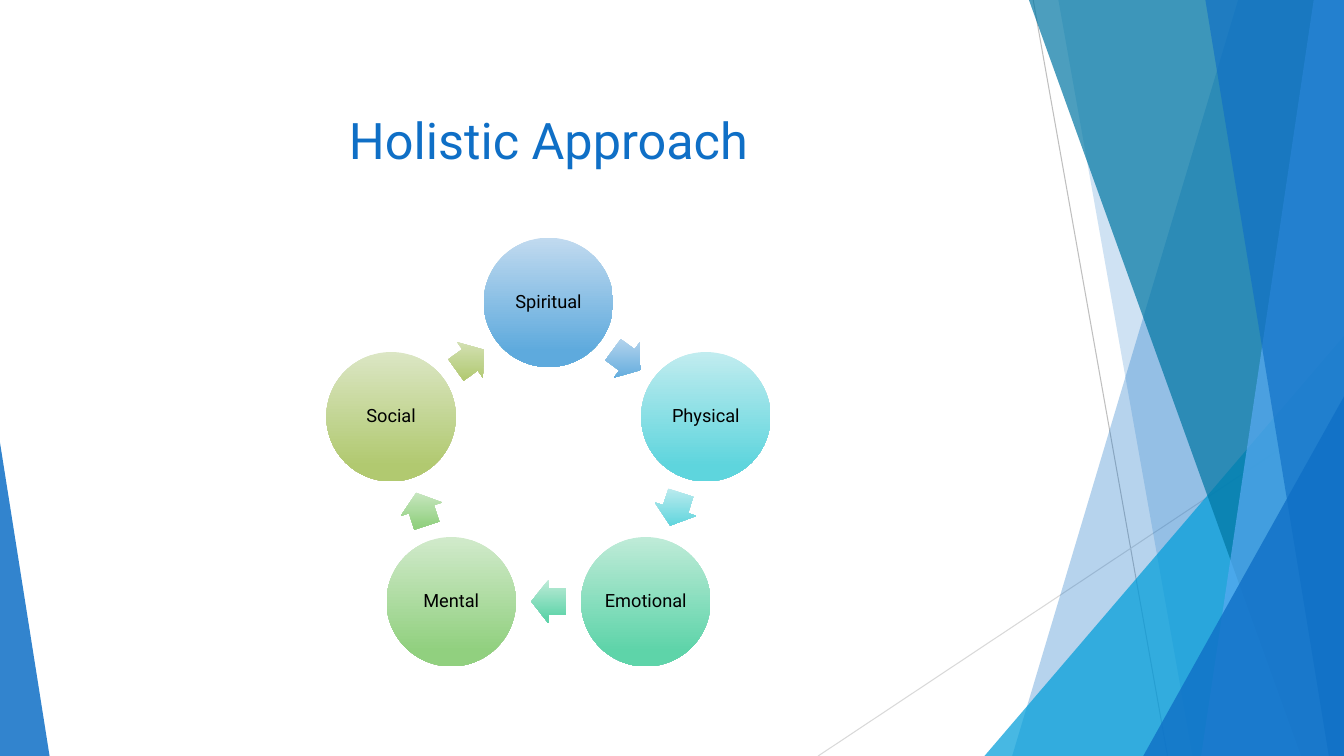
from math import cos, radians, sin

from pptx import Presentation
from pptx import util as u
from pptx.dml.color import RGBColor
from pptx.enum import shapes, text
from pptx.oxml import ns, xmlchemy

# Grid of square cells, 12 to the inch
COLUMNS, ROWS = 160, 90
CELL = u.Inches(1) / 12
FONT = "Roboto"

BLACK = RGBColor(0x00, 0x00, 0x00)
BLUE = RGBColor(0x0F, 0x6F, 0xC6)
SKY = RGBColor(0x00, 0x9D, 0xD9)
TEAL = RGBColor(0x00, 0x76, 0xA3)
LIGHT_BLUE = RGBColor(0x59, 0xAA, 0xF2)
GREY = RGBColor(0xBF, 0xBF, 0xBF)
PALE_GREY = RGBColor(0xD9, 0xD9, 0xD9)

# Cycle steps, clockwise from the top: label, upper colour, lower colour
STEPS = [
    ("Spiritual", RGBColor(0xC1, 0xDA, 0xEF), RGBColor(0x5E, 0xAA, 0xDD)),
    ("Physical", RGBColor(0xC1, 0xEC, 0xEF), RGBColor(0x5E, 0xD5, 0xDD)),
    ("Emotional", RGBColor(0xBF, 0xEB, 0xD8), RGBColor(0x5E, 0xD4, 0xA9)),
    ("Mental", RGBColor(0xD1, 0xEA, 0xCB), RGBColor(0x91, 0xD0, 0x7F)),
    ("Social", RGBColor(0xDB, 0xE6, 0xC4), RGBColor(0xB1, 0xC9, 0x70)),
]
CENTRE = (65.3, 55.7)
CIRCLE_RADIUS, ARROW_RADIUS = 19.7, 15.9
CIRCLE_SIZE, ARROW_SIZE = (15.4, 15.4), (4.1, 5.2)


def cells(*counts):
    return [u.Emu(round(count * CELL)) for count in counts]


def fill_solid(shape, colour, opacity):
    shape.shadow.inherit = False
    shape.line.fill.background()
    shape.fill.solid()
    shape.fill.fore_color.rgb = colour
    colour_node = shape.fill._xPr.find(".//" + ns.qn("a:srgbClr"))
    alpha = xmlchemy.OxmlElement("a:alpha")
    alpha.set("val", str(opacity * 1000))
    colour_node.append(alpha)


def fill_gradient(shape, upper, lower):
    shape.shadow.inherit = False
    shape.line.fill.background()
    shape.fill.gradient()
    shape.fill.gradient_angle = 270
    for stop, colour, position in zip(shape.fill.gradient_stops, (upper, lower), (0, 0.88)):
        stop.color.rgb = colour
        stop.position = position
    # Keep the gradient upright when the shape is rotated
    shape.fill._xPr.find(ns.qn("a:gradFill")).set("rotWithShape", "0")


def add_thin_line(page, start, end, colour):
    line = page.shapes.add_connector(
        shapes.MSO_CONNECTOR.STRAIGHT, *cells(*start), *cells(*end))
    line.line.color.rgb = colour
    line.line.width = u.Pt(0.75)
    line._element.spPr.append(xmlchemy.OxmlElement("a:effectLst"))


def add_band(page, top_column, bottom_column, colour, opacity):
    """Full-height band from a slanted left edge to the right slide edge."""
    builder = page.shapes.build_freeform(*cells(top_column, 0), scale=1.0)
    corners = [(COLUMNS, 0), (COLUMNS, ROWS), (bottom_column, ROWS)]
    builder.add_line_segments([cells(*corner) for corner in corners], close=True)
    fill_solid(builder.convert_to_shape(), colour, opacity)


def add_corner(page, left, right, top, apex, colour, opacity):
    """Triangle standing on the bottom edge of the slide."""
    corner = page.shapes.add_shape(
        shapes.MSO_SHAPE.ISOSCELES_TRIANGLE, *cells(left, top, right - left, ROWS - top))
    corner.adjustments[0] = apex
    fill_solid(corner, colour, opacity)


def write(box, words, size, colour):
    frame = box.text_frame
    frame.text = words
    frame.word_wrap = True
    frame.vertical_anchor = text.MSO_ANCHOR.MIDDLE
    para = frame.paragraphs[0]
    para.alignment = text.PP_ALIGN.CENTER
    font = para.runs[0].font
    font.name, font.size, font.color.rgb = FONT, u.Pt(size), colour


def add_on_ring(page, kind, angle, radius, size):
    """Shape centred on the ring, angle in degrees clockwise from the top."""
    width, height = size
    left = CENTRE[0] + radius * sin(radians(angle)) - width / 2
    top = CENTRE[1] - radius * cos(radians(angle)) - height / 2
    return page.shapes.add_shape(kind, *cells(left, top, width, height))


def add_step(page, angle, half_step, label, upper, lower):
    circle = add_on_ring(page, shapes.MSO_SHAPE.OVAL, angle, CIRCLE_RADIUS, CIRCLE_SIZE)
    fill_gradient(circle, upper, lower)
    frame = circle.text_frame
    frame.margin_left = frame.margin_right = u.Inches(0.02)
    frame.margin_top = frame.margin_bottom = u.Inches(0.02)
    write(circle, label, 13, BLACK)
    frame.paragraphs[0].line_spacing = 0.9

    arrow = add_on_ring(page, shapes.MSO_SHAPE.RIGHT_ARROW, angle + half_step,
                        ARROW_RADIUS, ARROW_SIZE)
    arrow.adjustments[0], arrow.adjustments[1] = 0.6, 0.5
    arrow.rotation = angle + half_step
    fill_gradient(arrow, upper, lower)


def add_backdrop(page):
    add_thin_line(page, (123, 0), (139, ROWS), GREY)
    add_thin_line(page, (COLUMNS, 48.4), (97.4, ROWS), PALE_GREY)
    add_band(page, 147.4, 120.5, BLUE, 30)
    add_band(page, 126, 142, BLUE, 20)
    add_corner(page, 117.2, COLUMNS, 40, 1, SKY, 72)
    add_band(page, 122.5, 154.9, TEAL, 70)
    add_band(page, 156.4, 143, LIGHT_BLUE, 70)
    add_band(page, 143.5, 158.2, BLUE, 65)
    add_corner(page, 136.1, COLUMNS, 47.2, 1, BLUE, 80)
    add_corner(page, 0, 5.9, 52.7, 0, BLUE, 85)


def main():
    deck = Presentation()
    deck.slide_width, deck.slide_height = cells(COLUMNS, ROWS)
    page = deck.slides.add_slide(deck.slide_layouts[6])

    add_backdrop(page)

    # Title
    title = page.shapes.add_textbox(*cells(8.9, 8, 112.8, 17.3))
    write(title, "Holistic Approach", 36, BLUE)

    # Cycle
    step_angle = 360 / len(STEPS)
    for index, step in enumerate(STEPS):
        add_step(page, index * step_angle, step_angle / 2, *step)

    deck.save("out.pptx")


if __name__ == "__main__":
    main()
